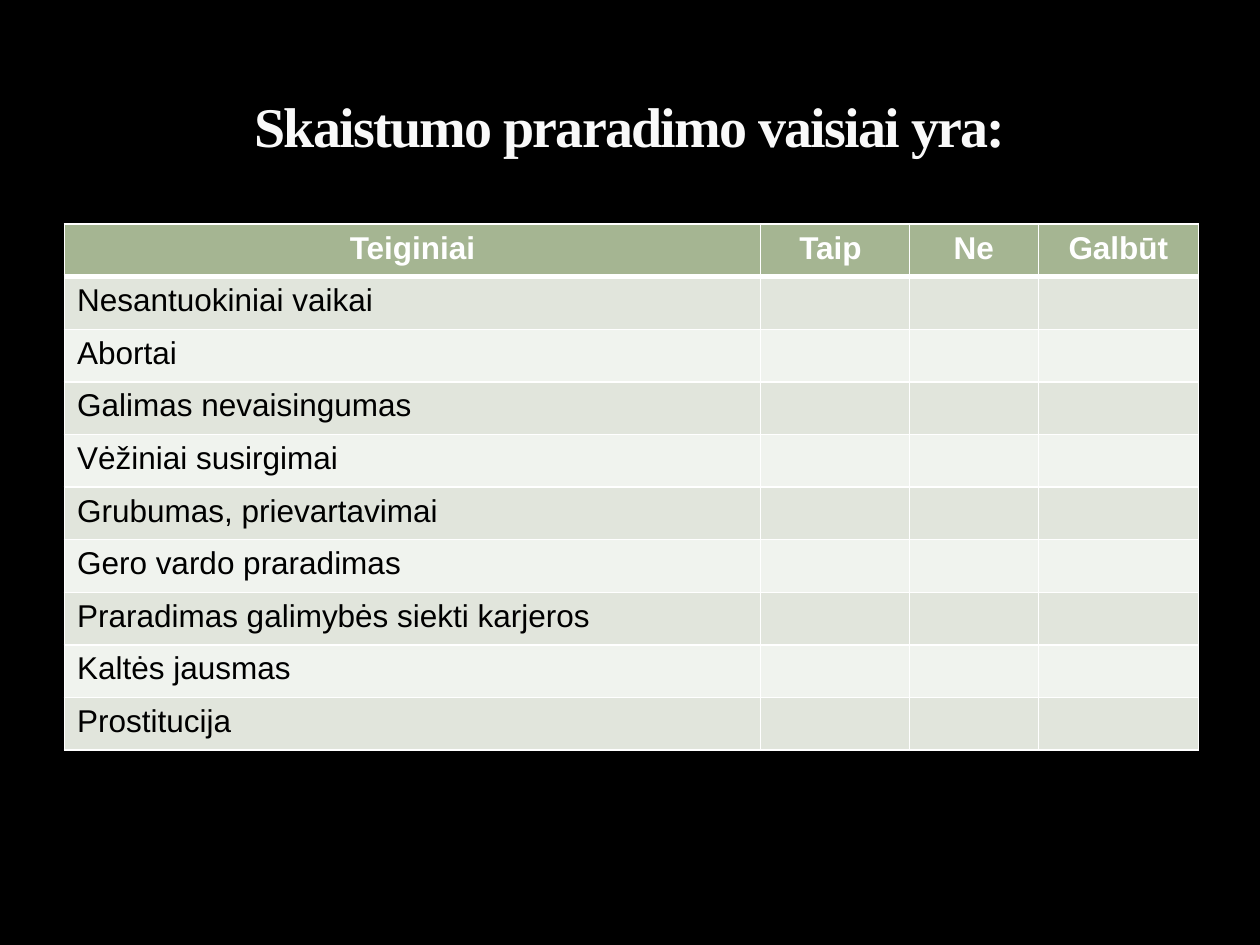
import pptx
import pptx.dml.color
import pptx.enum.text
import pptx.oxml
import pptx.oxml.ns
import pptx.util

Cm, Pt = pptx.util.Cm, pptx.util.Pt
RGB = pptx.dml.color.RGBColor.from_string
CENTER = pptx.enum.text.PP_ALIGN.CENTER
LEFT = pptx.enum.text.PP_ALIGN.LEFT

# Content
TITLE = "Skaistumo praradimo vaisiai yra:"
HEADERS = ["Teiginiai", "Taip ", "Ne", "Galbūt"]
STATEMENTS = [
    "Nesantuokiniai vaikai",
    "Abortai",
    "Galimas nevaisingumas",
    "Vėžiniai susirgimai",
    "Grubumas, prievartavimai",
    "Gero vardo praradimas",
    "Praradimas galimybės siekti karjeros",
    "Kaltės jausmas",
    "Prostitucija",
]

# Format
COLORS = {
    "background": "000000", "title": "F9F9F9", "outline": "3C4422",
    "header": "A5B592", "odd": "E1E5DC", "even": "F0F3EE",
    "border": "FFFFFF", "header_text": "FFFFFF", "text": "000000",
}
FONTS = {
    "title": {"name": "Times New Roman", "size": Pt(32), "bold": True},
    "header_text": {"name": "Arial", "size": Pt(18), "bold": True},
    "text": {"name": "Arial", "size": Pt(18), "bold": False},
}
COL_WIDTHS = [14.03, 3, 2.6, 3.23]
ROW_HEIGHT = 1.06
NS = pptx.oxml.ns.nsdecls("a")


def write(p, text, style, align):
    p.alignment = align
    r = p.add_run()
    r.text = text
    for name, value in FONTS[style].items():
        setattr(r.font, name, value)
    r.font.color.rgb = RGB(COLORS[style])
    return r


def line_xml(tag, width, color, alpha=100):
    return pptx.oxml.parse_xml(
        f'<a:{tag} {NS} w="{int(Pt(width))}"><a:solidFill><a:srgbClr val="{color}">'
        f'<a:alpha val="{alpha * 1000}"/></a:srgbClr></a:solidFill>'
        f'<a:prstDash val="solid"/></a:{tag}>')


def set_borders(cell, top, bottom):
    tcPr = cell._tc.get_or_add_tcPr()
    widths = {"lnL": 1, "lnR": 1, "lnT": top, "lnB": bottom}
    for i, (tag, width) in enumerate(widths.items()):
        tcPr.insert(i, line_xml(tag, width, COLORS["border"]))


prs = pptx.Presentation()
prs.slide_width, prs.slide_height = Cm(25.4), Cm(19.05)
s = prs.slides.add_slide(prs.slide_layouts[6])
s.background.fill.solid()
s.background.fill.fore_color.rgb = RGB(COLORS["background"])

# Table
rows = [HEADERS] + [[text, "", "", ""] for text in STATEMENTS]
table = s.shapes.add_table(
    len(rows), len(HEADERS), Cm(1.3), Cm(4.52),
    Cm(sum(COL_WIDTHS)), Cm(ROW_HEIGHT * len(rows))).table
for col, width in zip(table.columns, COL_WIDTHS):
    col.width = Cm(width)

for i, row in enumerate(rows):
    table.rows[i].height = Cm(ROW_HEIGHT)
    band = "header" if i == 0 else "odd" if i % 2 else "even"
    style, align = ("header_text", CENTER) if i == 0 else ("text", LEFT)
    for j, text in enumerate(row):
        cell = table.cell(i, j)
        cell.fill.solid()
        cell.fill.fore_color.rgb = RGB(COLORS[band])
        set_borders(cell, top=3 if i == 1 else 1, bottom=3 if i == 0 else 1)
        if text:
            write(cell.text_frame.paragraphs[0], text, style, align)

# Title
tf = s.shapes.add_textbox(Cm(1.27), Cm(0.43), Cm(22.86), Cm(2.9)).text_frame
tf.word_wrap = True
tf.vertical_anchor = pptx.enum.text.MSO_ANCHOR.BOTTOM
r = write(tf.paragraphs[0], TITLE, "title", CENTER)
rPr = r._r.get_or_add_rPr()
rPr.set("spc", "-100")
rPr.insert(0, line_xml("ln", 0.25, COLORS["outline"], alpha=25))

prs.save("out.pptx")
